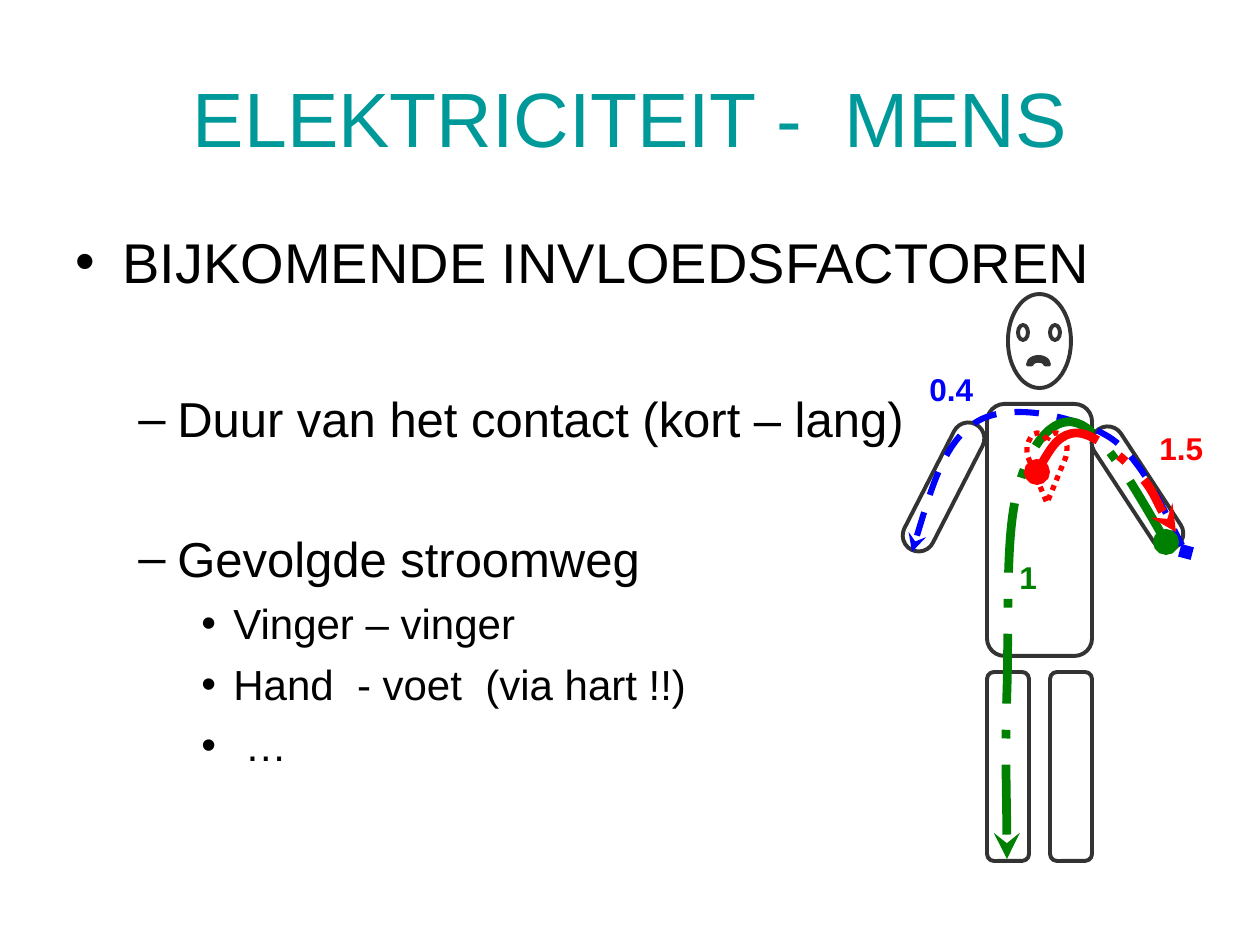
import pptx
import pptx.dml.color
import pptx.enum.dml
import pptx.enum.shapes
import pptx.enum.text
import pptx.util
import lxml.etree
import pptx.oxml.ns

PX = 914400 / 126
FONT = "Arial"
BLUE, GREEN, RED, OUTLINE = "0000FF", "008000", "FF0000", "333333"
SHAPE = pptx.enum.shapes.MSO_SHAPE
DASH = pptx.enum.dml.MSO_LINE

BODY = [
    ("BIJKOMENDE INVLOEDSFACTOREN", 0, 4),
    ("Duur van het contact (kort – lang)", 1, 54),
    ("Gevolgde stroomweg", 1, 46),
    ("Vinger – vinger", 2, 6),
    ("Hand  - voet  (via hart !!)", 2, 6),
    (" …", 2, 6),
]
LEVELS = [(32, 47, 47, "•"), (28, 102, 39, "–"), (24, 158, 32, "•")]

BODY_PARTS = [
    (SHAPE.OVAL, (1008, 294, 63, 94), 0, None),
    (SHAPE.ROUNDED_RECTANGLE, (987, 404, 105, 252), 0, 0.167),
    (SHAPE.ROUNDED_RECTANGLE, (1067, 472, 141, 32), 56.8, 0.5),
    (SHAPE.ROUNDED_RECTANGLE, (1050, 672, 42, 189), 0, 0.167),
    (SHAPE.ROUNDED_RECTANGLE, (987, 672, 42, 189), 0, 0.167),
    (SHAPE.ROUNDED_RECTANGLE, (873, 471, 141, 32), 117.1, 0.5),
    (SHAPE.BLOCK_ARC, (1028, 357, 21, 15), 0, None),
    (SHAPE.OVAL, (1018, 325, 10, 15), 0, None),
    (SHAPE.OVAL, (1050, 325, 10, 15), 0, None),
]

HAND_TO_HAND = [(912, 552), (929, 496), (945, 440), (978, 421), (1011, 402),
                (1075, 416), (1109, 437), (1144, 459), (1172, 530), (1186, 552)]
HAND_TO_FOOT = [(1007, 859), (1007, 806), (1005, 752), (1007, 690), (1009, 630),
                (1005, 537), (1017, 493), (1028, 447), (1052, 415), (1077, 423),
                (1101, 431), (1134, 486), (1166, 542)]
HEART_TO_HAND = [(1037, 472), (1048, 452), (1060, 433), (1077, 433), (1094, 433),
                 (1120, 456), (1137, 472), (1153, 489), (1166, 523), (1176, 532)]
HALF_HEART = [(1047, 440), (1046, 438), (1044, 435), (1043, 435), (1041, 433),
              (1039, 433), (1037, 433), (1034, 433), (1032, 435), (1031, 437),
              (1029, 440), (1028, 443), (1027, 446), (1027, 450), (1027, 454),
              (1028, 457), (1028, 457), (1047, 503), (1047, 503)]


def px(value):
    return pptx.util.Emu(round(value * PX))


def color(value):
    return pptx.dml.color.RGBColor.from_string(value)


def add_element(parent, tag, **attributes):
    return lxml.etree.SubElement(parent, pptx.oxml.ns.qn(tag), attributes)


def format_runs(paragraph, size, hex_color, bold=False):
    for run in paragraph.runs:
        run.font.name = FONT
        run.font.size = pptx.util.Pt(size)
        run.font.bold = bold
        run.font.color.rgb = color(hex_color)


def set_title(slide, text):
    title = slide.shapes.title
    title.left, title.top, title.width, title.height = map(px, (63, 38, 1134, 157))
    title.text_frame.text = text
    title.text_frame.vertical_anchor = pptx.enum.text.MSO_ANCHOR.MIDDLE
    paragraph = title.text_frame.paragraphs[0]
    paragraph.alignment = pptx.enum.text.PP_ALIGN.CENTER
    format_runs(paragraph, 44, "009999")


def add_body(slide):
    text_frame = slide.shapes.add_textbox(*map(px, (63, 221, 1134, 624))).text_frame
    text_frame.word_wrap = True
    text_frame.text = "\n".join(text for text, _, _ in BODY)
    for paragraph, (_, level, space) in zip(text_frame.paragraphs, BODY):
        size, margin, hanging, bullet = LEVELS[level]
        paragraph.level = level
        paragraph.space_before = pptx.util.Pt(space)
        format_runs(paragraph, size, "000000")
        properties = paragraph._p.get_or_add_pPr()
        properties.set("marL", str(px(margin)))
        properties.set("indent", str(px(-hanging)))
        add_element(properties, "a:buFont", typeface=FONT)
        add_element(properties, "a:buChar", char=bullet)


def add_body_part(shapes, kind, box, rotation, rounding):
    shape = shapes.add_shape(kind, *map(px, box))
    shape.shadow.inherit = False
    shape.rotation = rotation
    if rounding is not None:
        shape.adjustments[0] = rounding
    shape.fill.solid()
    shape.fill.fore_color.rgb = color("FFFFFF")
    shape.line.color.rgb = color(OUTLINE)
    shape.line.width = pptx.util.Pt(2.25)


def add_curve(shapes, points, hex_color, width, dash, head=None, tail=None):
    builder = shapes.build_freeform(*points[0], scale=PX)
    builder.add_line_segments(points[1:], close=points[0] == points[-1])
    shape = builder.convert_to_shape()
    segments = list(shape._element.iter(pptx.oxml.ns.qn("a:lnTo")))
    for first in range(0, len(points) - 1, 3):
        cubic = segments[first]
        curve = lxml.etree.Element(pptx.oxml.ns.qn("a:cubicBezTo"))
        cubic.addprevious(curve)
        for segment in segments[first:first + 3]:
            curve.append(segment[0])
            segment.getparent().remove(segment)
    shape.shadow.inherit = False
    shape.fill.background()
    shape.line.color.rgb = color(hex_color)
    shape.line.width = pptx.util.Pt(width)
    shape.line.dash_style = dash
    for tag, arrow in (("a:headEnd", head), ("a:tailEnd", tail)):
        if arrow:
            add_element(shape.line._get_or_add_ln(), tag, type=arrow)


def add_label(shapes, text, box, hex_color):
    text_frame = shapes.add_textbox(*map(px, box)).text_frame
    text_frame.word_wrap = True
    text_frame.text = text
    format_runs(text_frame.paragraphs[0], 18, hex_color, bold=True)


def main():
    presentation = pptx.Presentation()
    presentation.slide_width, presentation.slide_height = px(1260), px(945)
    slide = presentation.slides.add_slide(presentation.slide_layouts[5])
    set_title(slide, "ELEKTRICITEIT -\t MENS")
    add_body(slide)

    person = slide.shapes.add_group_shape().shapes
    for part in BODY_PARTS:
        add_body_part(person, *part)

    hands = slide.shapes.add_group_shape().shapes
    add_curve(hands, HAND_TO_HAND, BLUE, 3.5, DASH.DASH, "stealth", "diamond")
    add_label(hands, "0.4", (917, 364, 89, 50), BLUE)

    add_curve(slide.shapes, HAND_TO_FOOT, GREEN, 5, DASH.LONG_DASH_DOT, "stealth", "oval")

    axis = HALF_HEART[0][0]
    mirrored = [(2 * axis - x, y) for x, y in reversed(HALF_HEART)]
    add_curve(slide.shapes, HALF_HEART + mirrored[1:], RED, 3, DASH.ROUND_DOT)

    heart = slide.shapes.add_group_shape().shapes
    add_curve(heart, HEART_TO_HAND, RED, 5, DASH.LONG_DASH_DOT, "oval", "stealth")
    add_label(heart, "1.5", (1147, 423, 79, 50), RED)

    add_label(slide.shapes, "1", (1007, 552, 49, 50), GREEN)
    presentation.save("out.pptx")


if __name__ == "__main__":
    main()
